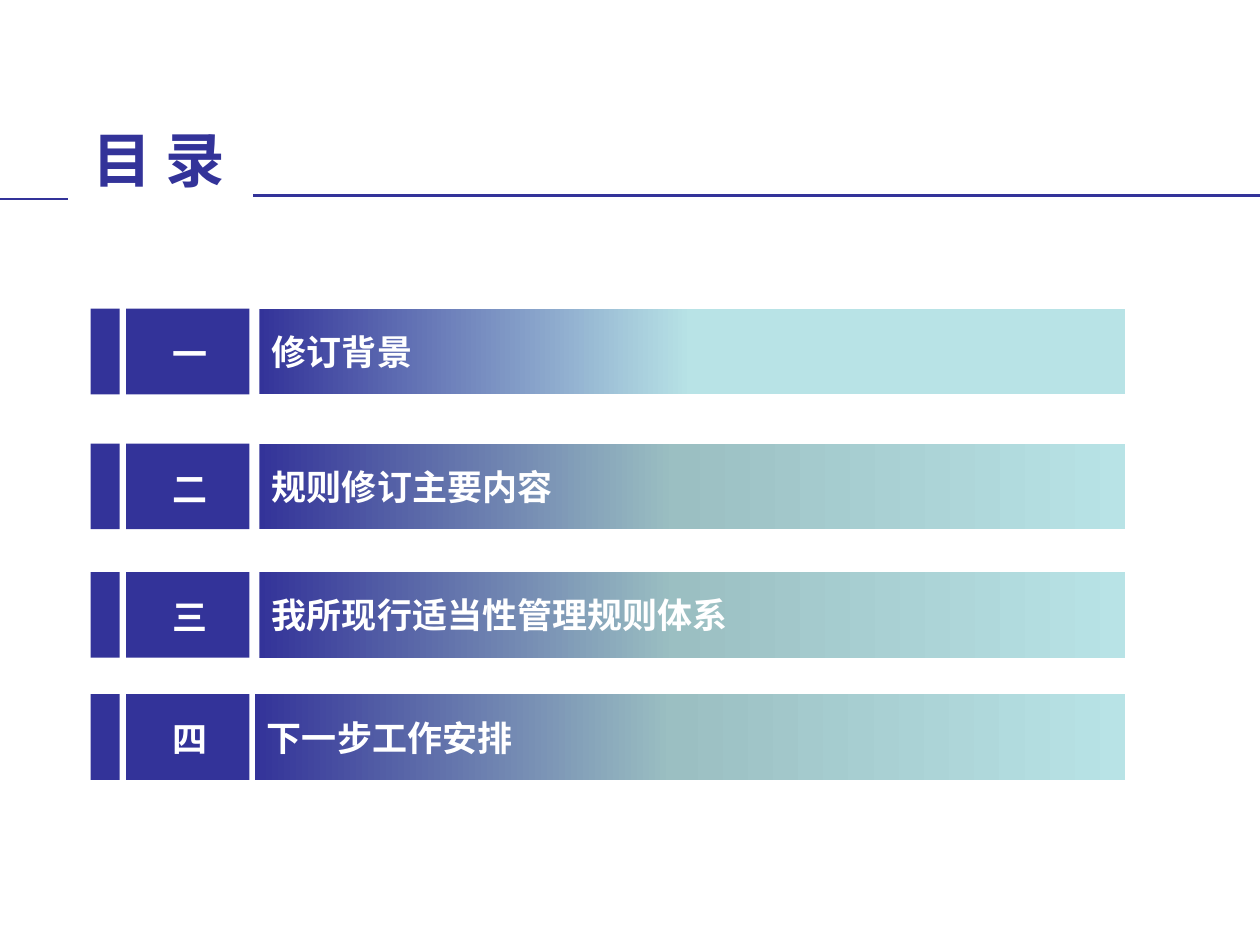
from dataclasses import dataclass

from lxml import etree
from pptx import Presentation
from pptx.dml.color import RGBColor
from pptx.enum.shapes import MSO_CONNECTOR, MSO_SHAPE
from pptx.enum.text import MSO_ANCHOR, MSO_AUTO_SIZE, PP_ALIGN
from pptx.oxml.ns import qn
from pptx.util import Inches, Pt

RECT = MSO_SHAPE.RECTANGLE
STRAIGHT = MSO_CONNECTOR.STRAIGHT
TOP, MIDDLE = MSO_ANCHOR.TOP, MSO_ANCHOR.MIDDLE
GROW, FIXED = MSO_AUTO_SIZE.SHAPE_TO_FIT_TEXT, MSO_AUTO_SIZE.NONE
LEFT, CENTER = PP_ALIGN.LEFT, PP_ALIGN.CENTER


@dataclass(frozen=True)
class Theme:
    navy: str = "333399"
    sage: str = "9BBFC2"
    aqua: str = "B8E3E6"
    white: str = "FFFFFF"
    font: str = "Noto Sans CJK SC"
    title: int = 34
    body: int = 20
    rule: float = 1.5


@dataclass(frozen=True)
class Entry:
    mark: str
    text: str
    top: float
    stops: tuple
    left: float = 2.06


THEME = Theme()
SHORT = ((0, THEME.navy), (50, THEME.aqua))
LONG = ((0, THEME.navy), (48, THEME.sage), (100, THEME.aqua))
ENTRIES = (
    Entry("一", "修订背景", 2.45, SHORT),
    Entry("二", "规则修订主要内容", 3.52, LONG),
    Entry("三", "我所现行适当性管理规则体系", 4.54, LONG),
    Entry("四", "下一步工作安排", 5.51, LONG, 2.02),
)
HEIGHT = 0.68
RIGHT = 8.93


def write(shape, text: str, *, size: int = THEME.body, color: str = THEME.white,
          align=LEFT, anchor=MIDDLE, wrap: bool = True, fit=FIXED,
          space: float = 1.0) -> None:
    frame = shape.text_frame
    frame.word_wrap = wrap
    frame.auto_size = fit
    frame.vertical_anchor = anchor
    para = frame.paragraphs[0]
    para.alignment = align
    para.line_spacing = space
    run = para.add_run()
    run.text = text
    font = run.font
    font.name = THEME.font
    font.size = Pt(size)
    font.bold = True
    font.color.rgb = RGBColor.from_string(color)
    props = run._r.get_or_add_rPr()
    etree.SubElement(props, qn("a:ea"), typeface=THEME.font)


def block(slide, left: float, top: float, width: float, height: float):
    shape = slide.shapes.add_shape(
        RECT, Inches(left), Inches(top), Inches(width), Inches(height))
    shape.shadow.inherit = False
    shape.line.fill.background()
    shape.fill.solid()
    shape.fill.fore_color.rgb = RGBColor.from_string(THEME.navy)
    return shape


def blend(shape, stops: tuple) -> None:
    shape.fill.gradient()
    shape.fill.gradient_angle = 0
    group = shape._element.spPr.find(qn("a:gradFill")).find(qn("a:gsLst"))
    for old in list(group):
        group.remove(old)
    for place, color in stops:
        stop = etree.SubElement(group, qn("a:gs"), pos=str(place * 1000))
        etree.SubElement(stop, qn("a:srgbClr"), val=color)


def rule(slide, start: float, end: float, top: float) -> None:
    line = slide.shapes.add_connector(
        STRAIGHT, Inches(start), Inches(top), Inches(end), Inches(top))
    line.line.color.rgb = RGBColor.from_string(THEME.navy)
    line.line.width = Pt(THEME.rule)
    etree.SubElement(line._element.spPr, qn("a:effectLst"))


def draw(slide, entry: Entry) -> None:
    block(slide, 0.72, entry.top, 0.23, HEIGHT)
    block(slide, 1, entry.top, 0.98, HEIGHT)
    mark = block(slide, 1.27, entry.top + 0.14, 0.47, 0.43)
    write(mark, entry.mark, wrap=False, fit=GROW)
    bar = block(slide, entry.left, entry.top, RIGHT - entry.left, HEIGHT)
    blend(bar, entry.stops)
    write(bar, entry.text)


def main() -> None:
    deck = Presentation()
    deck.slide_width, deck.slide_height = Inches(10), Inches(7.5)
    slide = deck.slides.add_slide(deck.slide_layouts[5])
    title = slide.shapes.title
    title.left, title.top = Inches(0.32), Inches(0.99)
    title.width, title.height = Inches(1.88), Inches(0.88)
    write(title, "目 录", size=THEME.title, color=THEME.navy,
          align=CENTER, anchor=TOP, space=0.9)
    rule(slide, 2.01, 10, 1.55)
    rule(slide, 0, 0.54, 1.58)
    for entry in ENTRIES:
        draw(slide, entry)
    deck.save("out.pptx")


if __name__ == "__main__":
    main()
